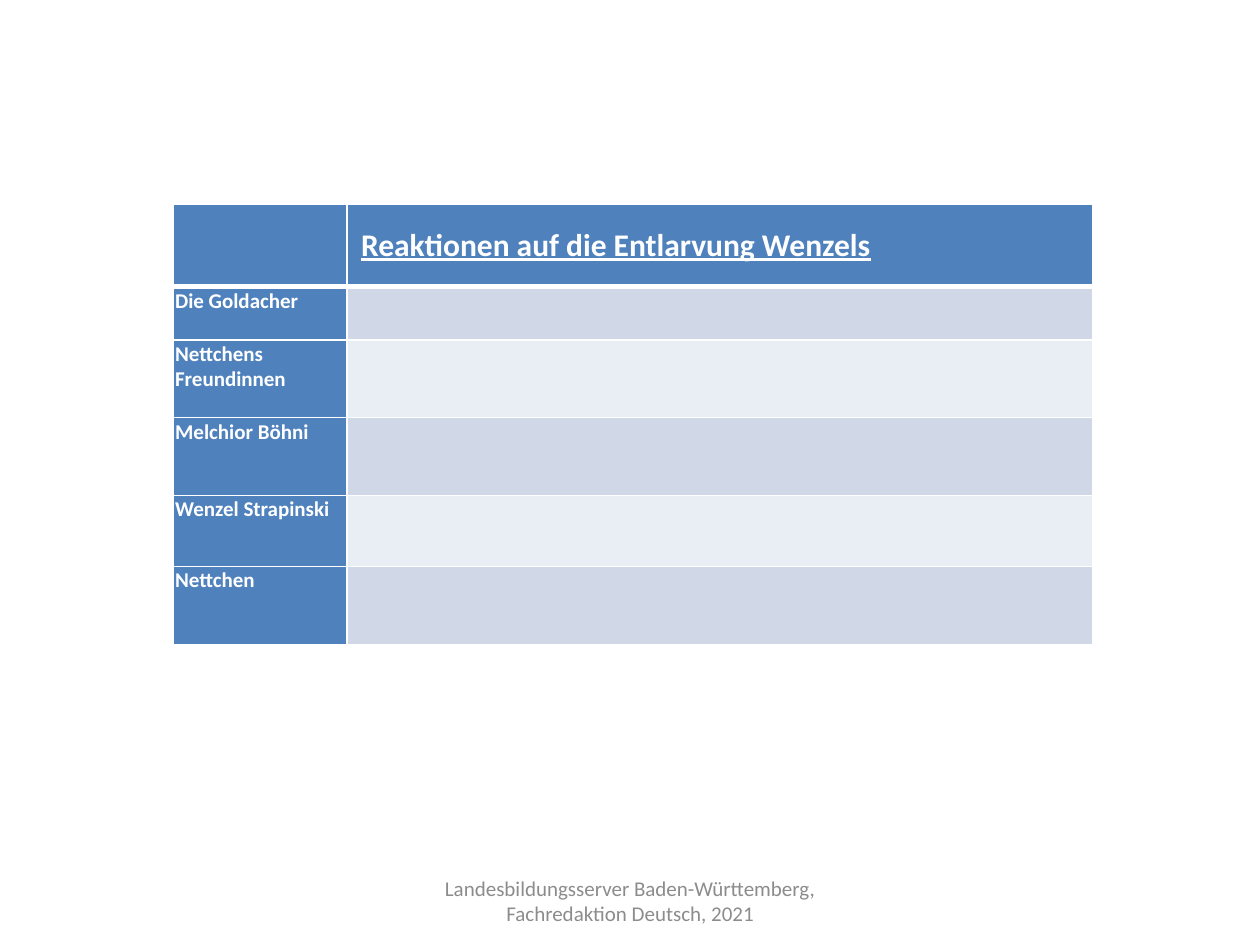
from dataclasses import dataclass

from lxml.etree import SubElement
from pptx import Presentation
from pptx.dml.color import RGBColor as RGB
from pptx.enum.text import MSO_ANCHOR as ANCHOR, PP_ALIGN as ALIGN
from pptx.oxml.ns import qn
from pptx.util import Cm, Pt


@dataclass(frozen=True)
class Theme:
    font: str = "Calibri"
    accent: str = "4F81BD"
    bands: tuple = ("D0D8E8", "E9EDF4")
    light: str = "FFFFFF"
    muted: str = "8C8C8C"
    title_size: int = 18
    body_size: int = 12
    thin: int = 1
    thick: int = 3


THEME = Theme()
TITLE = "Reaktionen auf die Entlarvung Wenzels"
PEOPLE = ("Die Goldacher", "Nettchens Freundinnen", "Melchior Böhni",
          "Wenzel Strapinski", "Nettchen")
FOOTER = "Landesbildungsserver Baden-Württemberg, Fachredaktion Deutsch, 2021"
NAME_WIDTH = 3.5
ROW_HEIGHTS = (1.66, 1.07, 1.57, 1.57, 1.43, 1.57)


def add_text(tf, text, size, color, align, bold=False, underline=False):
    p = tf.paragraphs[0]
    p.alignment = align
    r = p.add_run()
    r.text = text
    font = r.font
    font.name, font.size = THEME.font, Pt(size)
    font.bold, font.underline = bold, underline
    font.color.rgb = RGB.from_string(color)


def style_cell(cell, fill, **widths):
    tc_pr = cell._tc.get_or_add_tcPr()
    for side in ("L", "R", "T", "B"):
        width = Pt(widths.get(side, THEME.thin))
        ln = SubElement(tc_pr, qn(f"a:ln{side}"), w=str(width))
        solid = SubElement(ln, qn("a:solidFill"))
        SubElement(solid, qn("a:srgbClr"), val=THEME.light)
    cell.fill.solid()
    cell.fill.fore_color.rgb = RGB.from_string(fill)


def set_margins(cell, left=0.03):
    cell.margin_left = Cm(left)
    cell.margin_right = cell.margin_top = cell.margin_bottom = Cm(0.03)


def add_reactions(slide, left, top, width):
    table = slide.shapes.add_table(
        len(ROW_HEIGHTS), 2, Cm(left), Cm(top), Cm(width),
        Cm(sum(ROW_HEIGHTS))).table
    table.columns[0].width = Cm(NAME_WIDTH)
    table.columns[1].width = Cm(width - NAME_WIDTH)
    for row, height in zip(table.rows, ROW_HEIGHTS):
        row.height = Cm(height)

    for col in range(2):
        style_cell(table.cell(0, col), THEME.accent, B=THEME.thick)
    header = table.cell(0, 1)
    set_margins(header, left=0.28)
    header.vertical_anchor = ANCHOR.MIDDLE
    add_text(header.text_frame, TITLE, THEME.title_size, THEME.light,
             ALIGN.JUSTIFY, bold=True, underline=True)

    for i, person in enumerate(PEOPLE):
        top_width = THEME.thin if i else THEME.thick
        name, reaction = table.cell(i + 1, 0), table.cell(i + 1, 1)
        style_cell(name, THEME.accent, T=top_width)
        style_cell(reaction, THEME.bands[i % 2], T=top_width)
        set_margins(name)
        add_text(name.text_frame, person, THEME.body_size, THEME.light,
                 ALIGN.JUSTIFY, bold=True)


def add_footer(slide, left, top, width, height):
    tf = slide.shapes.add_textbox(
        Cm(left), Cm(top), Cm(width), Cm(height)).text_frame
    tf.word_wrap = True
    tf.vertical_anchor = ANCHOR.MIDDLE
    add_text(tf, FOOTER, THEME.body_size, THEME.muted, ALIGN.CENTER)


def main():
    prs = Presentation()
    prs.slide_width, prs.slide_height = Cm(25.4), Cm(19.05)
    slide = prs.slides.add_slide(prs.slide_layouts[6])
    add_reactions(slide, 3.5, 4.12, 18.52)
    add_footer(slide, 8.68, 17.65, 8.05, 1.02)
    prs.save("out.pptx")


if __name__ == "__main__":
    main()
